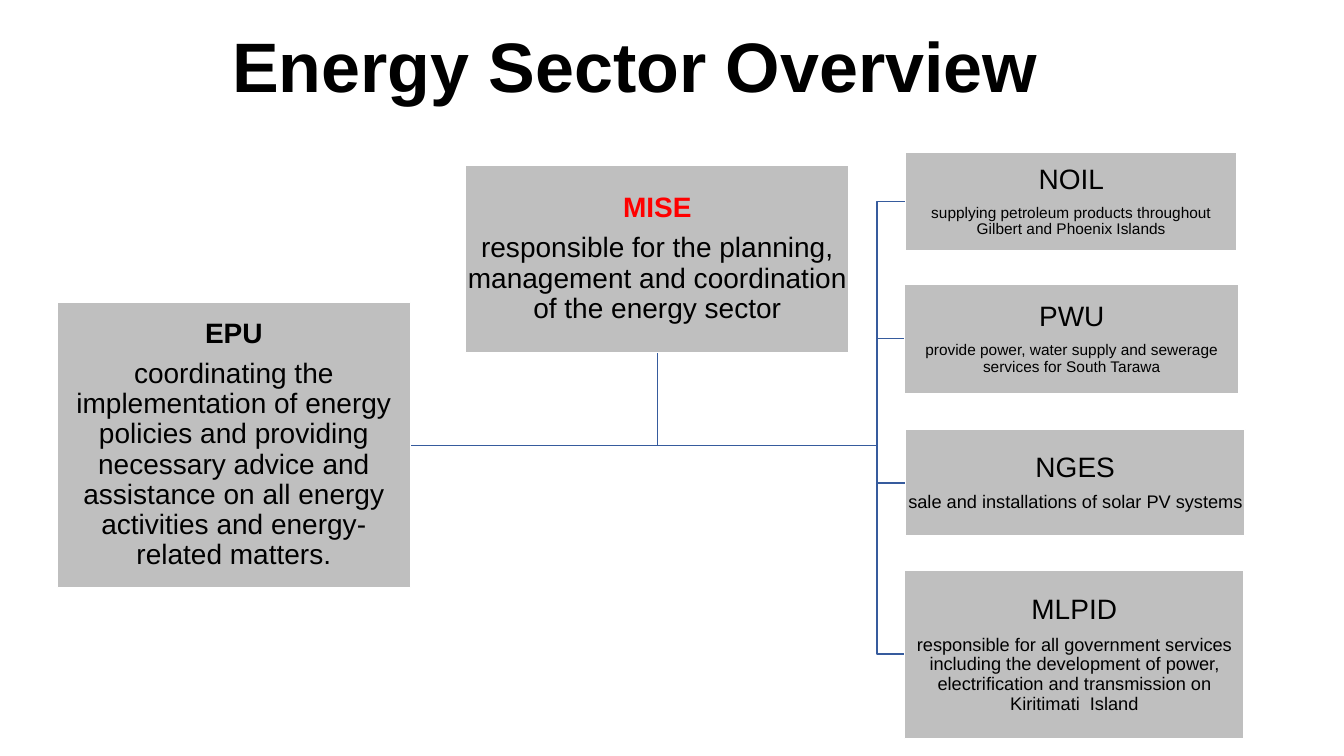
from pptx import Presentation
from pptx import util as u
from pptx.dml.color import RGBColor
from pptx.enum import shapes, text

PX = 9144
FONT = "Arial"
BLACK, RED, WHITE, GREY, BLUE = "000000", "FF0000", "FFFFFF", "BFBFBF", "365B9D"
EPU = (57, 300, 350, 283)
MISE = (462, 164, 380, 186)
TRUNK_X = 870
BODIES = [
    ((898, 151, 329, 98), "NOIL", 11,
     "supplying petroleum products throughout Gilbert and Phoenix Islands"),
    ((897, 282, 332, 109), "PWU", 11,
     "provide power, water supply and sewerage services for South Tarawa"),
    ((898, 426, 337, 106), "NGES", 13,
     "sale and installations of solar PV systems"),
    ((897, 566, 337, 167), "MLPID", 13,
     "responsible for all government services including the development of power, "
     "electrification and transmission on Kiritimati  Island"),
]


def px(*values):
    """Turn px lengths into EMU."""
    return [u.Emu(v * PX) for v in values]


def rgb(value):
    """Turn a hex string into a colour."""
    return RGBColor.from_string(value)


def put(obj, formats):
    """Set attributes from a dict of format values."""
    for name, value in formats.items():
        setattr(obj, name, value)


def write(tf, lines, inset):
    """Fill a text frame with centred (words, size, colour, bold) lines."""
    margins = {f"margin_{side}": u.Emu(inset * PX)
               for side in ("left", "top", "right", "bottom")}
    put(tf, {"word_wrap": True, "vertical_anchor": text.MSO_ANCHOR.MIDDLE, **margins})
    for i, (words, size, colour, bold) in enumerate(lines):
        p = tf.add_paragraph() if i else tf.paragraphs[0]
        put(p, {"alignment": text.PP_ALIGN.CENTER, "line_spacing": 0.9,
                "space_before": u.Pt(0), "space_after": u.Pt(round(size * 0.35))})
        r = p.add_run()
        r.text = words
        put(r.font, {"name": FONT, "size": u.Pt(size), "bold": bold})
        r.font.color.rgb = rgb(colour)


def add_title(slide, words):
    """Add the slide title."""
    sp = slide.shapes.add_textbox(*px(115, 26, 1030, 86))
    write(sp.text_frame, [(words, 50, BLACK, True)], 5)


def add_box(slide, box, name, role, size=20, colour=BLACK, bold=False):
    """Add a grey box with a body's name and its role."""
    sp = slide.shapes.add_shape(shapes.MSO_SHAPE.RECTANGLE, *px(*box))
    sp.shadow.inherit = False
    sp.fill.solid()
    sp.fill.fore_color.rgb = rgb(GREY)
    sp.line.color.rgb = rgb(WHITE)
    sp.line.width = u.Pt(1)
    write(sp.text_frame, [(name, 20, colour, bold), (role, size, BLACK, False)], 1)


def add_branch(slide, points):
    """Add an open angled line through the points."""
    fb = slide.shapes.build_freeform(*points[0], scale=PX)
    fb.add_line_segments(points[1:], close=False)
    sp = fb.convert_to_shape()
    sp.shadow.inherit = False
    sp.fill.background()
    sp.line.color.rgb = rgb(BLUE)
    sp.line.width = u.Pt(1)


def main():
    """Build the slide and save it."""
    prs = Presentation()
    prs.slide_width, prs.slide_height = px(1333, 750)
    slide = prs.slides.add_slide(prs.slide_layouts[6])
    add_title(slide, "Energy Sector Overview")

    left, top, width, height = EPU
    start = (left + width, top + height // 2 + 1)
    mise_x, mise_bottom = MISE[0] + MISE[2] // 2, MISE[1] + MISE[3]
    add_branch(slide, [start, (mise_x, start[1]), (mise_x, mise_bottom)])
    for (x, y, _, h), *_ in BODIES:
        middle = y + h // 2
        add_branch(slide, [start, (TRUNK_X, start[1]), (TRUNK_X, middle), (x, middle)])

    add_box(slide, EPU, "EPU",
            "coordinating the implementation of energy policies and providing necessary "
            "advice and assistance on all energy activities and energy-related matters.",
            bold=True)
    for box, name, size, role in BODIES:
        add_box(slide, box, name, role, size)
    add_box(slide, MISE, "MISE",
            "responsible for the planning, management and coordination of the energy sector",
            colour=RED, bold=True)
    prs.save("out.pptx")


if __name__ == "__main__":
    main()
